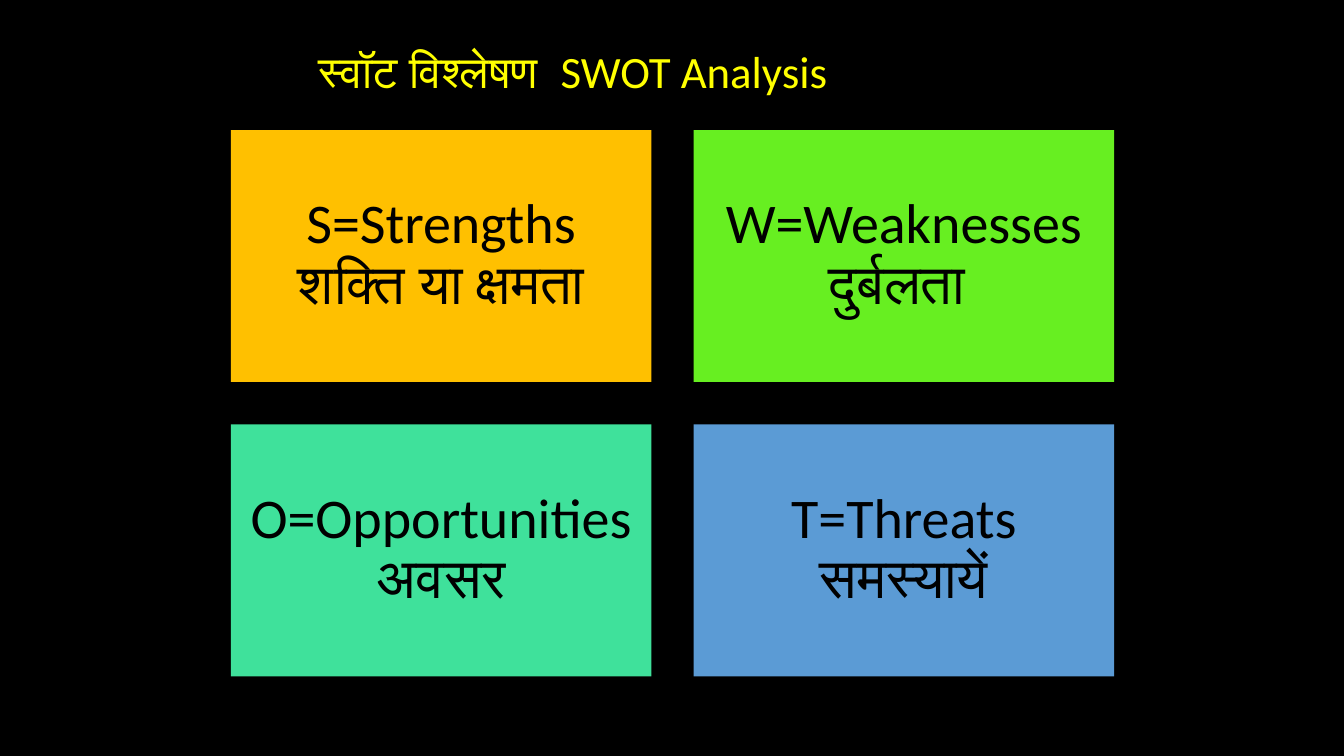
from pptx import Presentation
from pptx.dml.color import RGBColor
from pptx.enum.shapes import MSO_SHAPE
from pptx.enum.text import MSO_ANCHOR, MSO_AUTO_SIZE, PP_ALIGN
from pptx.util import Inches, Pt

TITLE = "स्वॉट विश्लेषण  SWOT Analysis"
QUADRANTS = [
    ("S=Strengths शक्ति या क्षमता", "FFC000"),
    ("W=Weaknesses दुर्बलता ", "67EF21"),
    ("O=Opportunities अवसर", "3FE19B"),
    ("T=Threats समस्यायें", "5B9BD5"),
]
COLUMNS = 2
GRID_LEFT, GRID_TOP = 2.29, 1.29
CARD_WIDTH, CARD_HEIGHT = 4.17, 2.5
GAP = 0.42
INSET = 0.17

TITLE_FRAME = {"vertical_anchor": MSO_ANCHOR.TOP, "word_wrap": True,
               "auto_size": MSO_AUTO_SIZE.SHAPE_TO_FIT_TEXT}
CARD_FRAME = {"vertical_anchor": MSO_ANCHOR.MIDDLE, "word_wrap": True}
CARD_FRAME.update({f"margin_{side}": Inches(INSET)
                   for side in ("left", "top", "right", "bottom")})
TITLE_PARAGRAPH = {"alignment": PP_ALIGN.LEFT}
CARD_PARAGRAPH = {"alignment": PP_ALIGN.CENTER, "line_spacing": 0.9}


def paint(fill, color):
    fill.solid()
    fill.fore_color.rgb = RGBColor.from_string(color)


def apply(target, values):
    for name, value in values.items():
        setattr(target, name, value)


def write(shape, text, size, color, frame_values, paragraph_values):
    frame = shape.text_frame
    apply(frame, frame_values)
    paragraph = frame.paragraphs[0]
    apply(paragraph, paragraph_values)
    run = paragraph.add_run()
    run.text = text
    apply(run.font, {"name": "Calibri", "size": Pt(size)})
    paint(run.font.fill, color)


def add_title(slide):
    title = slide.shapes.title
    apply(title, {"left": Inches(3.06), "top": Inches(0.38),
                  "width": Inches(7.7), "height": Inches(0.64)})
    write(title, TITLE, 32, "FFFF00", TITLE_FRAME, TITLE_PARAGRAPH)


def add_quadrant(slide, index, text, color):
    row, column = divmod(index, COLUMNS)
    card = slide.shapes.add_shape(
        MSO_SHAPE.RECTANGLE,
        Inches(GRID_LEFT + column * (CARD_WIDTH + GAP)),
        Inches(GRID_TOP + row * (CARD_HEIGHT + GAP)),
        Inches(CARD_WIDTH), Inches(CARD_HEIGHT))
    card.shadow.inherit = False
    card.line.fill.background()
    paint(card.fill, color)
    write(card, text, 40, "000000", CARD_FRAME, CARD_PARAGRAPH)


def main():
    presentation = Presentation()
    apply(presentation, {"slide_width": Inches(13.33), "slide_height": Inches(7.5)})
    slide = presentation.slides.add_slide(presentation.slide_layouts[5])
    paint(slide.background.fill, "000000")
    add_title(slide)
    for index, (text, color) in enumerate(QUADRANTS):
        add_quadrant(slide, index, text, color)
    presentation.save("out.pptx")


if __name__ == "__main__":
    main()
